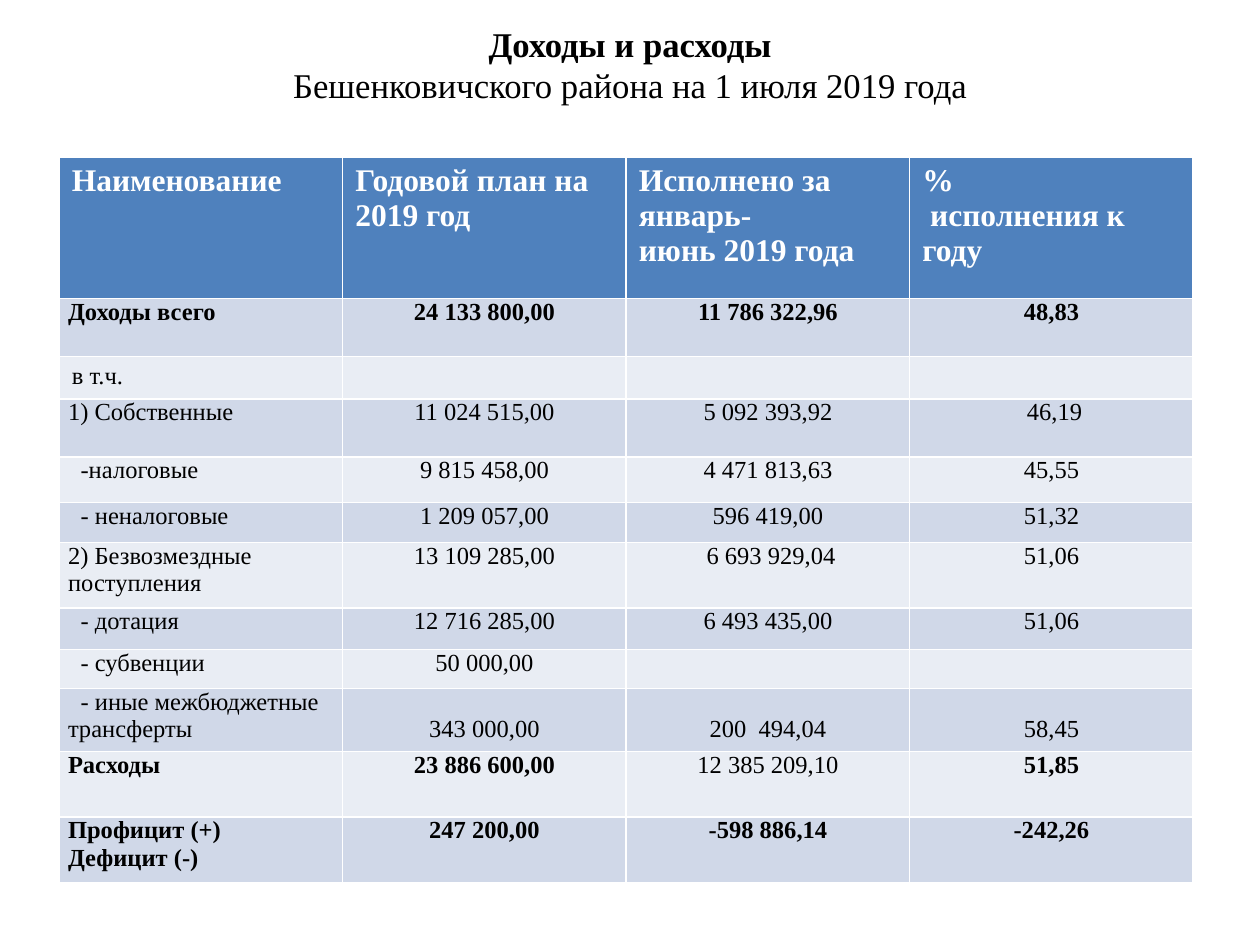
"""Build the slide with the district's budget income and spending table."""
from pptx import Presentation
from pptx import util as u
from pptx.dml.color import RGBColor
from pptx.enum import text
from pptx.oxml.xmlchemy import OxmlElement

BLACK = RGBColor(0x00, 0x00, 0x00)
WHITE = RGBColor(0xFF, 0xFF, 0xFF)
HEADER_BLUE = RGBColor(0x4F, 0x81, 0xBD)
BANDS = (RGBColor(0xD0, 0xD8, 0xE8), RGBColor(0xE9, 0xED, 0xF4))
FONT = "Times New Roman"
WIDTH, HEIGHT = u.Inches(10), u.Inches(7.5)
COLUMN_WIDTH = u.Inches(2.25)
SUB_INDENT = u.Inches(0.1)

TIGHT = {"margin_left": u.Inches(0.07), "margin_right": u.Inches(0.07),
         "margin_top": 0, "margin_bottom": 0}
LOW = {"vertical_anchor": text.MSO_ANCHOR.BOTTOM, "margin_bottom": u.Inches(0.07)}

HEADER = ("Наименование", "Годовой план на 2019 год",
          "Исполнено за январь-\nиюнь 2019 года", "%\n исполнения к году")
HEADER_HEIGHT = 1.12
BUDGET = (
    (0.46, "Доходы всего", "24 133 800,00", "11 786 322,96", "48,83"),
    (0.29, "в т.ч.", "", "", ""),
    (0.46, "1) Собственные", "11 024 515,00", "5 092 393,92", " 46,19"),
    (0.36, "-налоговые", "9 815 458,00", "4 471 813,63", "45,55"),
    (0.32, "- неналоговые", "1 209 057,00", "596 419,00", "51,32"),
    (0.52, "2) Безвозмездные поступления", "13 109 285,00", " 6 693 929,04", "51,06"),
    (0.33, "- дотация", "12 716 285,00", "6 493 435,00", "51,06"),
    (0.31, "- субвенции", "50 000,00", "", ""),
    (0.5, "- иные межбюджетные трансферты", "343 000,00", "200  494,04", "58,45"),
    (0.52, "Расходы", "23 886 600,00", "12 385 209,10", "51,85"),
    (0.52, "Профицит (+)\nДефицит (-)", "247 200,00", "-598 886,14", "-242,26"),
)
TOTALS = ("Доходы всего", "Расходы", "Профицит (+)\nДефицит (-)")
PLAIN_TOTAL = "12 385 209,10"
LOOSE_LABEL = "в т.ч."
LOW_LABEL = "- иные межбюджетные трансферты"


def apply(target, values):
    """Set each attribute named in a dict of format values."""
    for name, value in values.items():
        setattr(target, name, value)


def style_font(font, size, color, bold):
    """Give a font the slide's typeface with a size, colour and weight."""
    apply(font, {"name": FONT, "size": u.Pt(size), "bold": bold})
    font.color.rgb = color


def add_title(slide):
    """Place the two-line heading in the title placeholder."""
    heading = slide.shapes.title
    apply(heading, {"left": int(WIDTH * 0.05), "top": int(HEIGHT * 0.04),
                    "width": int(WIDTH * 0.9), "height": u.Inches(0.72)})
    frame = heading.text_frame
    apply(frame, {"vertical_anchor": text.MSO_ANCHOR.MIDDLE, "word_wrap": True,
                  "auto_size": text.MSO_AUTO_SIZE.NONE,
                  "margin_top": 0, "margin_bottom": u.Inches(0.3)})
    paragraph = frame.paragraphs[0]
    paragraph.alignment = text.PP_ALIGN.CENTER
    lines = (("Доходы и расходы", True),
             ("Бешенковичского района на 1 июля 2019 года", False))
    for number, (line, bold) in enumerate(lines):
        if number:
            paragraph.add_line_break()
        run = paragraph.add_run()
        run.text = line
        style_font(run.font, 19.8, BLACK, bold)


def fill_cell(cell, words, fill, size, color, bold, align, margins):
    """Write a cell's text and set its fill, font, alignment and margins."""
    cell.fill.solid()
    cell.fill.fore_color.rgb = fill
    apply(cell, margins)
    cell.text_frame.text = words
    for paragraph in cell.text_frame.paragraphs:
        paragraph.alignment = align
        for run in paragraph.runs:
            style_font(run.font, size, color, bold)
        if not words:
            end = OxmlElement("a:endParaRPr")
            end.set("sz", str(size * 100))
            paragraph._p.append(end)
        if words.startswith("-") and align == text.PP_ALIGN.LEFT:
            paragraph._p.get_or_add_pPr().set("indent", str(SUB_INDENT))


def fill_budget_row(table, number, entries):
    """Fill one banded row of the budget."""
    label = entries[0]
    for column, words in enumerate(entries):
        margins = {} if label == LOOSE_LABEL else dict(TIGHT)
        if column and label == LOW_LABEL:
            margins.update(LOW)
        bold = label in TOTALS and words != PLAIN_TOTAL
        align = text.PP_ALIGN.CENTER if column else text.PP_ALIGN.LEFT
        fill_cell(table.cell(number, column), words, BANDS[(number - 1) % 2],
                  14, BLACK, bold, align, margins)


def add_budget(slide):
    """Add the budget table with its header and banded rows."""
    heights = [HEADER_HEIGHT] + [row[0] for row in BUDGET]
    table = slide.shapes.add_table(
        len(heights), len(HEADER), u.Inches(0.47), u.Inches(1.25),
        COLUMN_WIDTH * len(HEADER), u.Inches(sum(heights))).table
    for column in table.columns:
        column.width = COLUMN_WIDTH
    for row, height in zip(table.rows, heights):
        row.height = u.Inches(height)
    for column, words in enumerate(HEADER):
        fill_cell(table.cell(0, column), words, HEADER_BLUE, 18, WHITE, True,
                  text.PP_ALIGN.LEFT, {})
    for number, (_, *entries) in enumerate(BUDGET, 1):
        fill_budget_row(table, number, entries)


def main():
    """Build and save the slide."""
    deck = Presentation()
    apply(deck, {"slide_width": WIDTH, "slide_height": HEIGHT})
    slide = deck.slides.add_slide(deck.slide_layouts[5])
    add_title(slide)
    add_budget(slide)
    deck.save("out.pptx")


if __name__ == "__main__":
    main()
